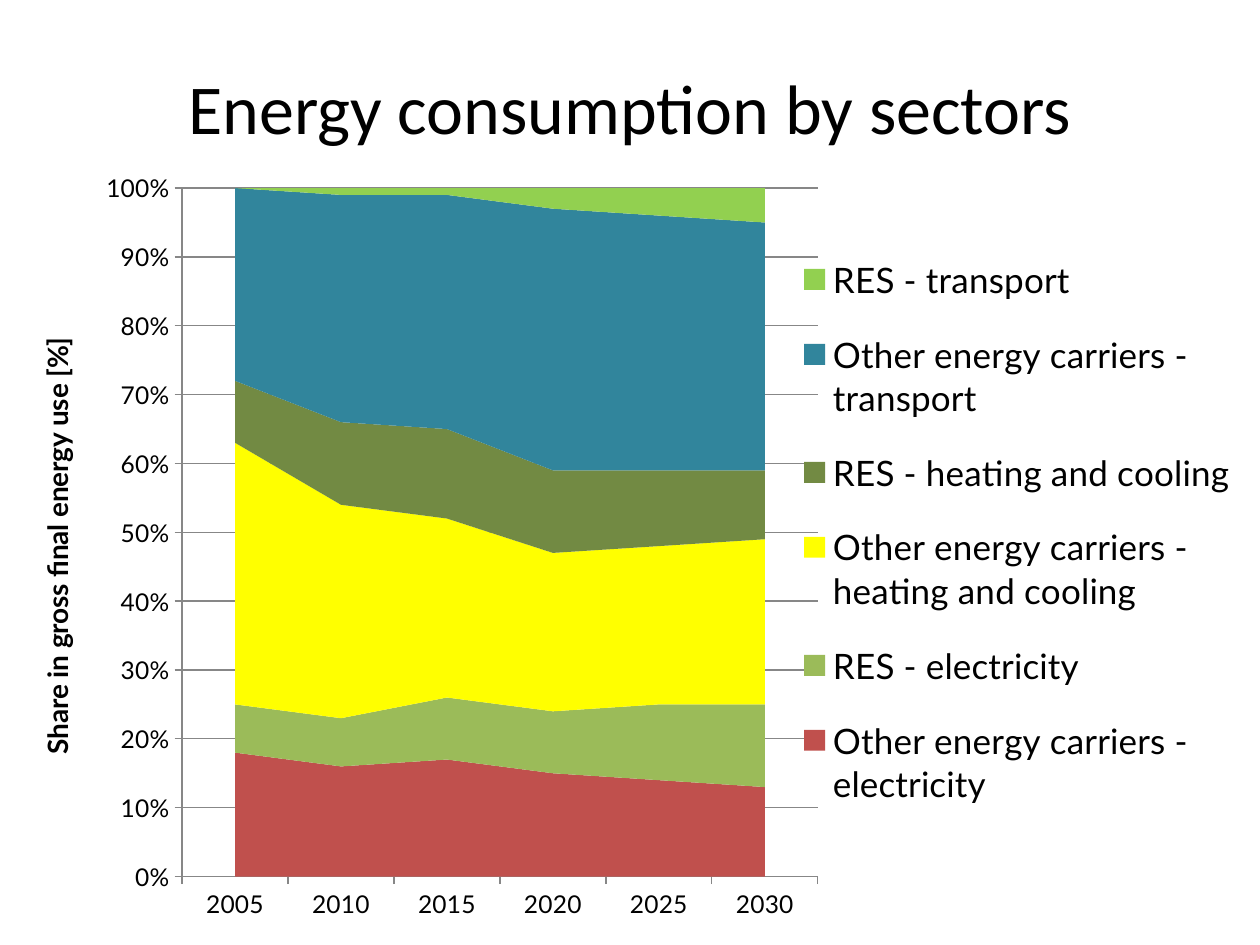
from dataclasses import dataclass

from lxml.etree import SubElement
from pptx import Presentation
from pptx.chart.data import CategoryChartData
from pptx.dml.color import RGBColor
from pptx.enum.chart import XL_CHART_TYPE, XL_LEGEND_POSITION, XL_TICK_MARK
from pptx.enum.text import MSO_ANCHOR, PP_ALIGN
from pptx.oxml import parse_xml
from pptx.oxml.ns import nsdecls, qn
from pptx.util import Cm, Pt

COLORS = {
    "text": "000000",
    "axis": "878787",
    "red": "C0504D",
    "green": "9BBB59",
    "yellow": "FFFF00",
    "olive": "728A43",
    "teal": "31859C",
    "lime": "92D050",
}
YEARS = ["2005", "2010", "2015", "2020", "2025", "2030"]


@dataclass
class Band:
    name: str
    color: str
    shares: tuple[float, ...]


BANDS = [
    Band("Other energy carriers - electricity", "red",
         (0.18, 0.16, 0.17, 0.15, 0.14, 0.13)),
    Band("RES - electricity", "green",
         (0.07, 0.07, 0.09, 0.09, 0.11, 0.12)),
    Band("Other energy carriers - heating and cooling", "yellow",
         (0.38, 0.31, 0.26, 0.23, 0.23, 0.24)),
    Band("RES - heating and cooling", "olive",
         (0.09, 0.12, 0.13, 0.12, 0.11, 0.10)),
    Band("Other energy carriers - transport", "teal",
         (0.28, 0.33, 0.34, 0.38, 0.37, 0.36)),
    Band("RES - transport", "lime",
         (0, 0.01, 0.02, 0.04, 0.04, 0.05)),
]


def tint(name: str) -> RGBColor:
    return RGBColor.from_string(COLORS[name])


def style(font, size: int, face: str, bold: bool = False) -> None:
    font.size, font.name, font.bold = Pt(size), face, bold
    font.color.rgb = tint("text")


def rule(line) -> None:
    line.color.rgb = tint("axis")
    line.width = Pt(0.75)


def place(node, spot: int, box: tuple[float, ...], inner: bool = False) -> None:
    """Give a chart part a fixed place, in fractions of the chart."""
    for old in node.findall(qn("c:layout")):
        node.remove(old)
    layout = parse_xml(f"<c:layout {nsdecls('c')}><c:manualLayout/></c:layout>")
    manual = layout[0]
    parts = [("layoutTarget", "inner")] if inner else []
    parts += [("xMode", "edge"), ("yMode", "edge"), *zip("xywh", box)]
    for tag, val in parts:
        SubElement(manual, qn(f"c:{tag}")).set("val", str(val))
    node.insert(spot, layout)


def add_title(slide, text: str) -> None:
    box = slide.shapes.add_textbox(Cm(1.27), Cm(0.76), Cm(22.86), Cm(2.77))
    frame = box.text_frame
    frame.word_wrap = True
    frame.vertical_anchor = MSO_ANCHOR.MIDDLE
    frame.text = text
    para = frame.paragraphs[0]
    para.alignment = PP_ALIGN.CENTER
    style(para.runs[0].font, 40, "Calibri")


def add_areas(slide, bands: list[Band]) -> None:
    data = CategoryChartData(number_format="0%")
    data.categories = YEARS
    for band in bands:
        data.add_series(band.name, band.shares)
    chart = slide.shapes.add_chart(
        XL_CHART_TYPE.AREA_STACKED,
        Cm(0.3), Cm(3.33), Cm(24.79), Cm(15.39), data).chart
    chart.has_title = False
    style(chart.font, 11, "Lato")
    for series, band in zip(chart.plots[0].series, bands):
        series.format.fill.solid()
        series.format.fill.fore_color.rgb = tint(band.color)

    # Axes
    years, share = chart.category_axis, chart.value_axis
    for axis in (years, share):
        axis.major_tick_mark = XL_TICK_MARK.OUTSIDE
        axis.minor_tick_mark = XL_TICK_MARK.NONE
        style(axis.tick_labels.font, 14, "Lato")
        rule(axis.format.line)
    years.has_major_gridlines = False
    share.has_major_gridlines = True
    rule(share.major_gridlines.format.line)
    share.minimum_scale, share.maximum_scale, share.major_unit = 0, 1, 0.1
    share.tick_labels.number_format = "0%"
    share.tick_labels.number_format_is_linked = False
    frame = share.axis_title.text_frame
    frame.text = "Share in gross final energy use [%]"
    style(frame.paragraphs[0].runs[0].font, 16, "Lato", bold=True)

    # Half a step of space at each end of the year axis
    area = chart.plots[0]._element.getparent()
    for cross in area.iter(qn("c:crossBetween")):
        cross.set("val", "between")
    place(area, 0, (0.136, 0.03, 0.517, 0.902), inner=True)

    # Legend
    chart.has_legend = True
    legend = chart.legend
    legend.position = XL_LEGEND_POSITION.RIGHT
    legend.include_in_layout = False
    style(legend.font, 20, "Lato")
    place(legend._element, 1, (0.63, 0.08, 0.37, 0.8))


def main() -> None:
    deck = Presentation()
    deck.slide_width, deck.slide_height = Cm(25.4), Cm(19.05)
    slide = deck.slides.add_slide(deck.slide_layouts[6])
    add_title(slide, "Energy consumption by sectors")
    add_areas(slide, BANDS)
    deck.save("out.pptx")


if __name__ == "__main__":
    main()
